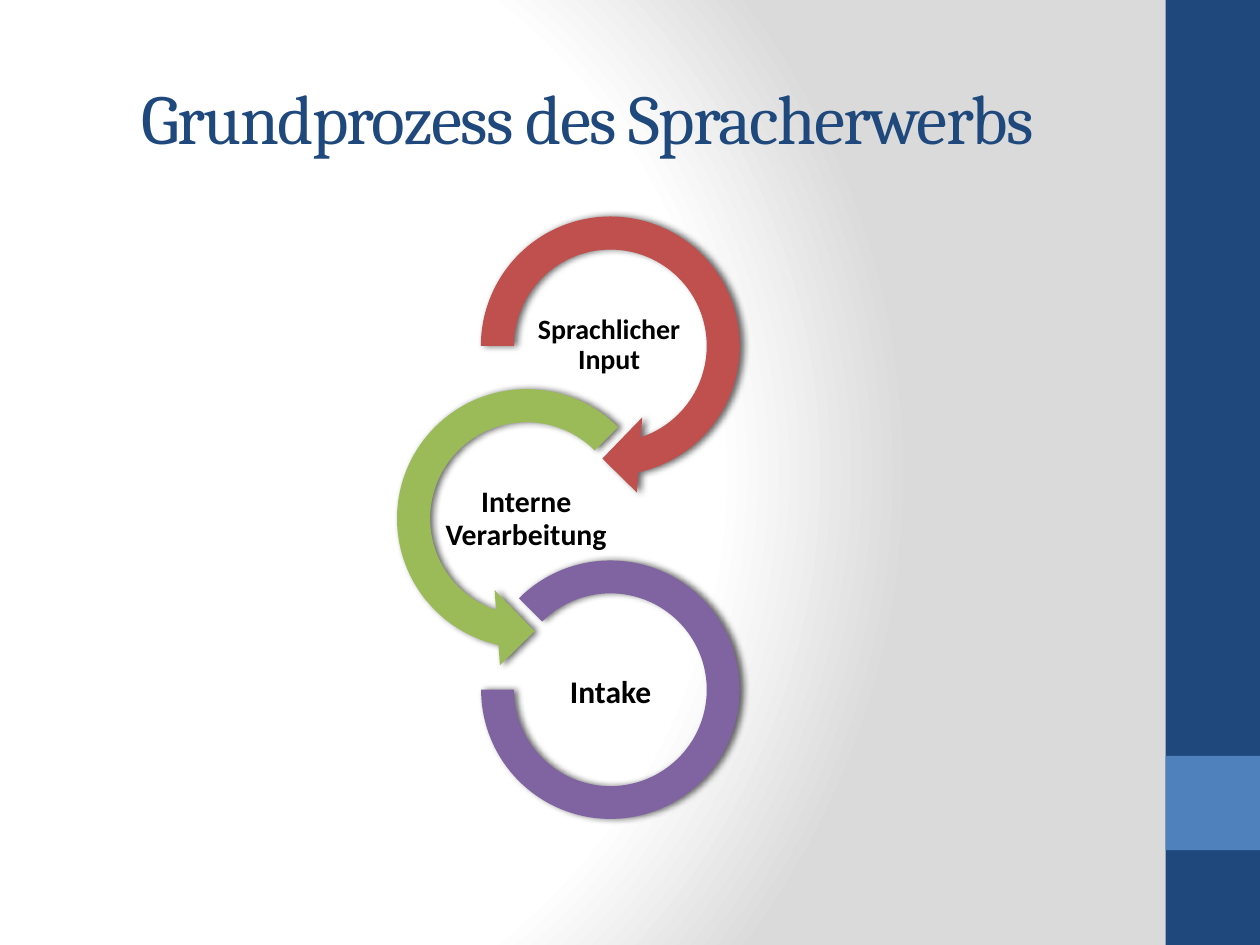
from pptx import Presentation
from pptx.dml.color import RGBColor
from pptx.enum.shapes import MSO_SHAPE
from pptx.enum.text import MSO_ANCHOR, PP_ALIGN
from pptx.oxml import parse_xml
from pptx.oxml.ns import nsdecls
from pptx.util import Cm, Pt

RECT = MSO_SHAPE.RECTANGLE
ARROW = MSO_SHAPE.CIRCULAR_ARROW
LEFT_ARROW = MSO_SHAPE.LEFT_CIRCULAR_ARROW
ARC = MSO_SHAPE.BLOCK_ARC
MIDDLE, CENTER = MSO_ANCHOR.MIDDLE, PP_ALIGN.CENTER
NAVY, BLUE = "1F497D", "4F81BD"

prs = Presentation()
prs.slide_width, prs.slide_height = Cm(25.4), Cm(19.05)
slide = prs.slides.add_slide(prs.slide_layouts[6])


def add_figure(kind, box, color):
    figure = slide.shapes.add_shape(kind, *[Cm(v) for v in box])
    figure.shadow.inherit = False
    figure.fill.solid()
    figure.fill.fore_color.rgb = RGBColor.from_string(color)
    figure.line.fill.background()
    return figure


def add_text(text, box, inset, spacing, font_format, color):
    frame = slide.shapes.add_textbox(*[Cm(v) for v in box]).text_frame
    frame_format = {"word_wrap": True, "vertical_anchor": MIDDLE}
    for side, value in zip(("left", "top", "right", "bottom"), inset):
        frame_format[f"margin_{side}"] = Cm(value)
    for key, value in frame_format.items():
        setattr(frame, key, value)
    paragraph = frame.paragraphs[0]
    paragraph.alignment, paragraph.line_spacing = CENTER, spacing
    run = paragraph.add_run()
    run.text = text
    for key, value in font_format.items():
        setattr(run.font, key, value)
    run.font.color.rgb = RGBColor.from_string(color)
    return run


# Background: radial gradient from white to grey
slide.background.fill.solid()
backdrop = slide.background.fill._xPr
stops = "".join(
    f'<a:gs pos="{pos * 1000}"><a:srgbClr val="{color}"/></a:gs>'
    for pos, color in ((0, "FFFFFF"), (75, "FFFFFF"), (100, "DADADA")))
backdrop.replace(backdrop[0], parse_xml(
    f'<a:gradFill {nsdecls("a")} rotWithShape="1"><a:gsLst>{stops}</a:gsLst>'
    '<a:path path="circle"><a:fillToRect l="20000" t="50000" r="100000" b="50000"/>'
    '</a:path></a:gradFill>'))

# Side band with its accent square
add_figure(RECT, (23.5, 0, 1.9, 19.05), NAVY)
add_figure(RECT, (23.5, 15.24, 1.9, 1.9), BLUE)

# Title
title = add_text("Grundprozess des Spracherwerbs", (1.27, 0.76, 21.16, 3.18),
                 (0.25, 0.13, 0.25, 0.13), 1.0,
                 {"name": "Cambria", "size": Pt(40)}, NAVY)
title.font._element.set("spc", "-100")

# Process stages: ring shape, left, top, diameter, adjustments, colour,
# then label, its left, top and text size
stages = [
    (ARROW, 9.27, 3.94, 6.07, (0.11, 11.42, 45, 108, 0.125), "C0504D",
     "Sprachlicher Input", 10.59, 6.12, 16),
    (LEFT_ARROW, 7.58, 7.42, 6.07, (0.11, 11.42, 63, 189, 0.125), "9BBB59",
     "Interne Verarbeitung", 8.92, 9.63, 17),
    (ARC, 9.7, 11.3, 5.21, (135, 108, 0.127), "8064A2",
     "Intake", 10.62, 13.13, 18),
]
for kind, left, top, size, adjustments, color, label, label_left, label_top, points in stages:
    ring = add_figure(kind, (left, top, size, size), color)
    for index, value in enumerate(adjustments):
        ring.adjustments[index] = value
    effects = ring._element.spPr.find("{*}effectLst")
    effects.append(parse_xml(
        f'<a:outerShdw {nsdecls("a")} blurRad="{Pt(4)}" dist="{Pt(2)}" dir="0" '
        'rotWithShape="0"><a:srgbClr val="000000"><a:alpha val="60000"/></a:srgbClr>'
        '</a:outerShdw>'))
    add_text(label, (label_left, label_top, 3.38, 1.68), (0.03,) * 4, 0.9,
             {"name": "Calibri", "size": Pt(points), "bold": True}, "000000")

prs.save("out.pptx")
